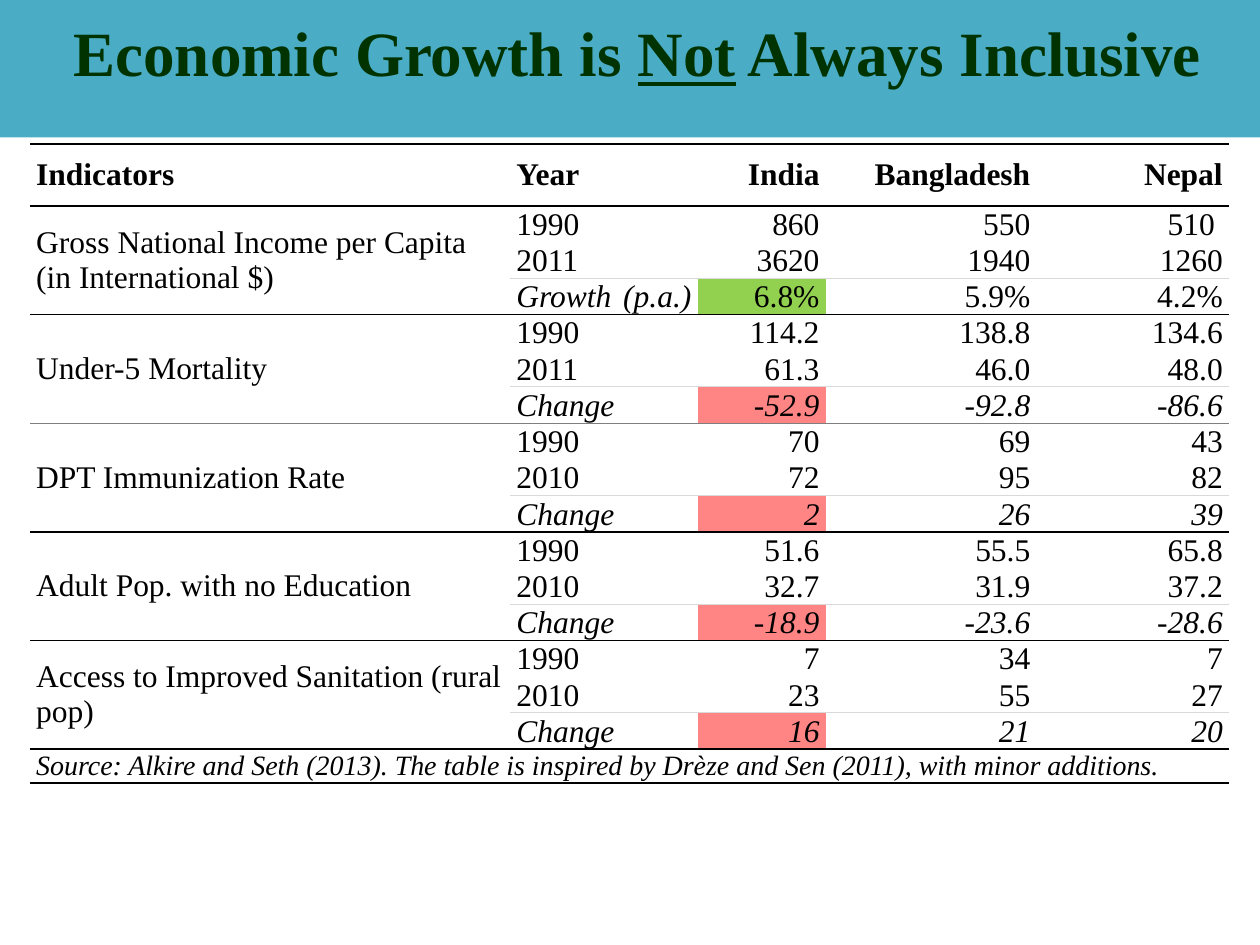
from pptx import Presentation
from pptx.dml.color import RGBColor
from pptx.enum import shapes, text
from pptx.oxml import parse_xml
from pptx.oxml.ns import nsdecls, qn
from pptx.util import Cm, Pt

THEME = {
    "font": "Times New Roman",
    "title": 36, "body": 18, "note": 16,
    "band": "4BACC6", "head": "003300", "ink": "000000",
    "good": "92D050", "poor": "FF8585",
    "rule": ("000000", 1), "soft": ("7F7F7F", 0.5), "thin": ("D9D9D9", 0.75),
}
TITLE = [("Economic Growth is ", False), ("Not", True), (" Always Inclusive", False)]
HEADS = ["Indicators", "Year", "India", "Bangladesh", "Nepal"]
GROUPS = [
    ("Gross National Income per Capita (in International $)", "good", "rule", [
        ("1990", "860", "550", "510 "),
        ("2011", "3620", "1940", "1260"),
        ("Growth (p.a.) ", "6.8%", "5.9%", "4.2%")]),
    ("Under-5 Mortality", "poor", "soft", [
        ("1990", "114.2", "138.8", "134.6"),
        ("2011", "61.3", "46.0", "48.0"),
        ("Change", "-52.9", "-92.8", "-86.6")]),
    ("DPT Immunization Rate", "poor", "rule", [
        ("1990", "70", "69", "43"),
        ("2010", "72", "95", "82"),
        ("Change", "2", "26", "39")]),
    ("Adult Pop. with no Education", "poor", "rule", [
        ("1990", "51.6", "55.5", "65.8"),
        ("2010", "32.7", "31.9", "37.2"),
        ("Change", "-18.9", "-23.6", "-28.6")]),
    ("Access to Improved Sanitation (rural pop)", "poor", "rule", [
        ("1990", "7", "34", "7"),
        ("2010", "23", "55", "27"),
        ("Change", "16", "21", "20")]),
]
SOURCE = ("Source: Alkire and Seth (2013). The table is inspired by "
          "Drèze and Sen (2011), with minor additions.")
WIDTHS = [9.68, 3.79, 2.58, 4.25, 3.88]
SPAN = 3
HEIGHTS = [1.25] + [0.73] * (SPAN * len(GROUPS)) + [0.69]
PLAIN = "{2D5ABB26-0587-4C30-8999-92F81FD0307C}"
ALIGN = text.PP_ALIGN
ANCHOR = text.MSO_ANCHOR
SIDES = [ALIGN.LEFT, ALIGN.JUSTIFY] + [ALIGN.RIGHT] * 3


def color(name):
    return RGBColor.from_string(THEME[name])


def add_run(para, words, size, ink="ink", bold=False, slant=False, under=False):
    run = para.add_run()
    run.text = words
    font = run.font
    font.name = THEME["font"]
    font.size = Pt(THEME[size])
    font.color.rgb = color(ink)
    font.bold, font.italic, font.underline = bold, slant, under


def add_edge(cell, tag, style):
    if style:
        tone, width = THEME[style]
        xml = (f'<a:{tag} {nsdecls("a")} w="{Pt(width)}"><a:solidFill>'
               f'<a:srgbClr val="{tone}"/></a:solidFill></a:{tag}>')
    else:
        xml = f'<a:{tag} {nsdecls("a")} w="0"><a:noFill/></a:{tag}>'
    cell._tc.get_or_add_tcPr().append(parse_xml(xml))


def style_cell(cell, top, base, fill=None, anchor=ANCHOR.MIDDLE):
    cell.margin_left = cell.margin_right = Cm(0.13)
    cell.margin_top = cell.margin_bottom = 0
    cell.vertical_anchor = anchor
    for tag, style in zip(("lnL", "lnR", "lnT", "lnB"), (None, None, top, base)):
        add_edge(cell, tag, style)
    if fill:
        cell.fill.solid()
        cell.fill.fore_color.rgb = color(fill)
    else:
        cell.fill.background()


def write(cell, words, side, size="body", **look):
    para = cell.text_frame.paragraphs[0]
    para.alignment = side
    add_run(para, words, size, **look)


def add_title(slide):
    band = slide.shapes.add_shape(shapes.MSO_SHAPE.RECTANGLE, 0, 0, Cm(25.7), Cm(2.77))
    band.shadow.inherit = False
    band.fill.solid()
    band.fill.fore_color.rgb = color("band")
    band.line.fill.background()
    frame = band.text_frame
    frame.word_wrap = True
    frame.vertical_anchor = ANCHOR.TOP
    frame.margin_top = Cm(0.28)
    para = frame.paragraphs[0]
    para.alignment = ALIGN.CENTER
    for words, under in TITLE:
        add_run(para, words, "title", "head", bold=True, under=under)


def add_group(table, start, group, above):
    name, mark, below, lines = group
    table.cell(start, 0).merge(table.cell(start + SPAN - 1, 0))
    write(table.cell(start, 0), name, SIDES[0])
    edges = [above, None, "thin", below]
    for step, line in enumerate(lines):
        row, last = start + step, step == SPAN - 1
        first = step == 0
        style_cell(table.cell(row, 0), above if first else None,
                   below if first or last else None)
        for col, words in enumerate(line, 1):
            cell = table.cell(row, col)
            style_cell(cell, edges[step], edges[step + 1],
                       mark if last and col == 2 else None, ANCHOR.BOTTOM)
            slant = last and (col == 1 or mark == "poor")
            write(cell, words, SIDES[col], slant=slant)


def add_grid(slide):
    frame = slide.shapes.add_table(len(HEIGHTS), len(WIDTHS), Cm(0.6), Cm(2.9),
                                   Cm(sum(WIDTHS)), Cm(sum(HEIGHTS)))
    table = frame.table
    table.first_row = table.horz_banding = False
    table._tbl.tblPr.find(qn("a:tableStyleId")).text = PLAIN
    for col, width in zip(table.columns, WIDTHS):
        col.width = Cm(width)
    for row, height in zip(table.rows, HEIGHTS):
        row.height = Cm(height)
    for col, words in enumerate(HEADS):
        cell = table.cell(0, col)
        style_cell(cell, "rule", "rule")
        write(cell, words, SIDES[col], bold=True)
    above = "rule"
    for num, group in enumerate(GROUPS):
        add_group(table, 1 + num * SPAN, group, above)
        above = group[2]
    end = len(HEIGHTS) - 1
    table.cell(end, 0).merge(table.cell(end, len(WIDTHS) - 1))
    for col in range(len(WIDTHS)):
        style_cell(table.cell(end, col), above, "rule")
    write(table.cell(end, 0), SOURCE, SIDES[0], "note", slant=True)


def main():
    deck = Presentation()
    deck.slide_width, deck.slide_height = Cm(25.4), Cm(19.05)
    slide = deck.slides.add_slide(deck.slide_layouts[6])
    add_title(slide)
    add_grid(slide)
    deck.save("out.pptx")


if __name__ == "__main__":
    main()
